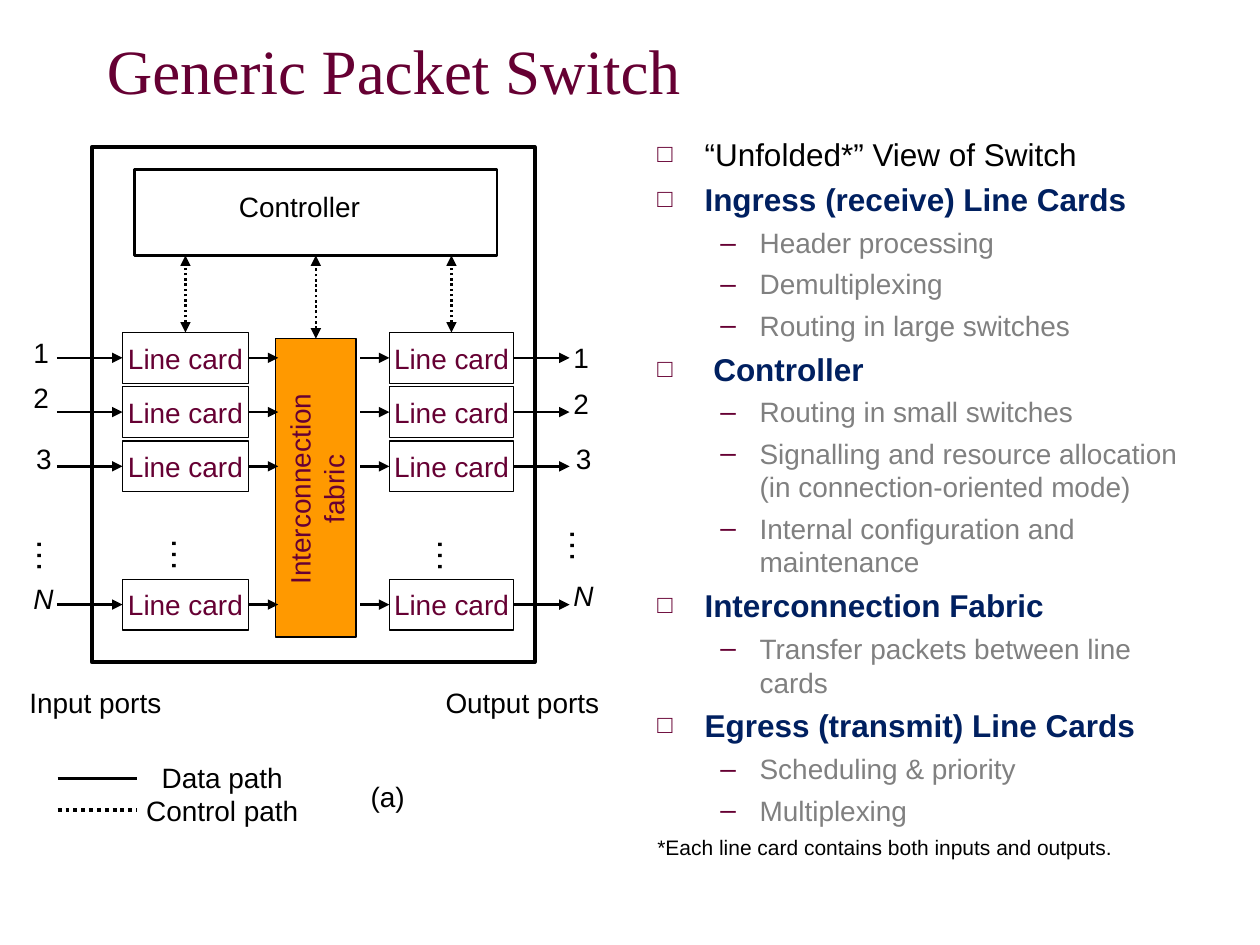
"""Build the Generic Packet Switch slide."""
from lxml.etree import SubElement
from pptx import Presentation
from pptx.dml.color import RGBColor
from pptx.enum.dml import MSO_LINE
from pptx.enum.shapes import MSO_CONNECTOR, MSO_SHAPE
from pptx.enum.text import MSO_ANCHOR, PP_ALIGN
from pptx.oxml.ns import qn
from pptx.util import Pt

THEME = {
    "wine": "660033", "navy": "002060", "gray": "808080", "black": "000000",
    "white": "FFFFFF", "orange": "FF9900",
    "title": 36, "head": 18, "text": 16, "note": 12, "dots": 20,
}
TITLE = "Generic Packet Switch"
POINTS = [
    ("first", "“Unfolded*” View of Switch"),
    ("head", "Ingress (receive) Line Cards"),
    ("sub", "Header processing"),
    ("sub", "Demultiplexing"),
    ("sub", "Routing in large switches"),
    ("head", " Controller"),
    ("sub", "Routing in small switches"),
    ("sub", "Signalling and resource allocation (in connection-oriented mode)"),
    ("sub", "Internal configuration and maintenance"),
    ("head", "Interconnection Fabric"),
    ("sub", "Transfer packets between line cards"),
    ("head", "Egress (transmit) Line Cards"),
    ("sub", "Scheduling & priority"),
    ("sub", "Multiplexing"),
    ("note", "*Each line card contains both inputs and outputs."),
]
LOOKS = {
    "first": {"size": "head", "color": "black", "mark": "□"},
    "head": {"size": "head", "color": "navy", "mark": "□", "bold": True},
    "sub": {"size": "text", "color": "gray", "mark": "–"},
    "note": {"size": "note", "color": "black", "mark": None},
}
PORTS = [
    ("1", 190, (12, 188), (320.5, 191)),
    ("2", 221, (12, 214), (320.5, 217.5)),
    ("3", 252, (13.5, 248.5), (322, 248.5)),
    ("N", 331, (12, 329), (320.5, 327)),
]
NOTES = [
    ("Controller", (129.5, 104.5, 100, 26), {}),
    ("Input ports", (9.5, 388, 90, 26.5), {"align": "CENTER", "anchor": "MIDDLE"}),
    ("Output ports", (247, 388, 103, 26.5), {"align": "CENTER", "anchor": "MIDDLE"}),
    ("Data path Control path", (70.5, 430.5, 113, 46),
     {"align": "CENTER", "anchor": "MIDDLE", "wrap": True}),
    ("(a)", (204.5, 442, 34, 26.5), {"align": "CENTER", "anchor": "MIDDLE"}),
    ("Interconnection\nfabric", (119, 256.5, 124, 46), {"align": "CENTER", "color": "wine", "turn": 270}),
]
DOTS = [(301, 294.5), (225.5, 300), (73.5, 299.5), (-3.5, 300)]
LEGEND = [(445, 1.5, False), (463, 2.25, True)]
INLET, OUTLET, CARD = 32.5, 325.5, 29


def tint(name):
    return RGBColor.from_string(THEME[name])


def style(font, size="text", color="black", **form):
    form = {"name": "Arial", "size": Pt(THEME[size]), **form}
    for key, value in form.items():
        setattr(font, key, value)
    font.color.rgb = tint(color)


def write(shape, text, align="LEFT", anchor="TOP", wrap=False, **form):
    frame = shape.text_frame
    frame.text = text
    frame.word_wrap = wrap
    frame.vertical_anchor = MSO_ANCHOR[anchor]
    for par in frame.paragraphs:
        par.alignment = PP_ALIGN[align]
        style(par.font, **form)
    return frame


def label(slide, text, area, turn=0, **form):
    box = slide.shapes.add_textbox(*map(Pt, area))
    box.rotation = turn
    return write(box, text, **form)


def block(slide, area, width, fill=None):
    box = slide.shapes.add_shape(MSO_SHAPE.RECTANGLE, *map(Pt, area))
    box.shadow.inherit = False
    if fill:
        box.fill.solid()
        box.fill.fore_color.rgb = tint(fill)
    else:
        box.fill.background()
    box.line.color.rgb = tint("black")
    box.line.width = Pt(width)
    return box


def wire(slide, start, stop, ends=("tailEnd",), width=1.5, dotted=False, source=None, target=None):
    link = slide.shapes.add_connector(MSO_CONNECTOR.STRAIGHT, *map(Pt, start + stop))
    if source:
        link.begin_connect(*source)
    if target:
        link.end_connect(*target)
    link.line.color.rgb = tint("black")
    link.line.width = Pt(width)
    if dotted:
        link.line.dash_style = MSO_LINE.ROUND_DOT
    for end in ends:
        SubElement(link.line._get_or_add_ln(), qn("a:" + end), type="triangle")
    SubElement(link._element.spPr, qn("a:effectLst"))


def bullet(par, mark):
    sub = mark == "–"
    par.level = int(sub)
    props = par._p.get_or_add_pPr()
    props.set("marL", str(Pt(58.5 if sub else 27)))
    props.set("indent", str(Pt(-22.5 if sub else -27)))
    if not mark:
        SubElement(props, qn("a:buNone"))
        return
    SubElement(SubElement(props, qn("a:buClr")), qn("a:srgbClr"), val=THEME["wine"])
    SubElement(props, qn("a:buSzPct"), val="100000" if sub else "80000")
    SubElement(props, qn("a:buFont"), typeface="Arial")
    SubElement(props, qn("a:buChar"), char=mark)


def outline(slide):
    box = slide.shapes.add_textbox(*map(Pt, (368.5, 72, 317.5, 408)))
    frame = box.text_frame
    frame.word_wrap = True
    frame.margin_top = Pt(5)
    for rank, (kind, text) in enumerate(POINTS):
        par = frame.add_paragraph() if rank else frame.paragraphs[0]
        look = dict(LOOKS[kind])
        par.text = text
        bullet(par, look.pop("mark"))
        if rank:
            par.space_before = Pt(4.4)
        style(par.font, **look)


def diagram(slide):
    block(slide, (52.5, 84, 253, 294.5), 2.25)
    control = block(slide, (77, 97, 207, 49), 1.5, "white")
    fabric = block(slide, (157.5, 193.5, 46, 170.5), 0.75, "orange")
    tops = []
    for name, top, left, right in PORTS:
        mid = top + CARD / 2
        cards = [block(slide, (x, top, w, CARD), 0.75, "white") for x, w in ((70, 72), (222.5, 71))]
        for card in cards:
            write(card, "Line card", "CENTER", "MIDDLE", color="wine")
        tops.append(cards)
        enter, leave = cards
        wire(slide, (INLET, mid), (70, mid), target=(enter, 1))
        wire(slide, (142, mid), (159, mid), source=(enter, 3))
        wire(slide, (206, mid), (222.5, mid), target=(leave, 1))
        wire(slide, (293.5, mid), (OUTLET, mid), source=(leave, 3))
        for spot in (left, right):
            label(slide, name, spot + (24, 26), italic=name == "N")
    both = ("headEnd", "tailEnd")
    for card, x in zip(tops[0], (106, 258)):
        wire(slide, (x, 190), (x, 146), both, dotted=True, source=(card, 0))
    wire(slide, (180.5, 193.5), (180.5, 146), both, dotted=True, source=(fabric, 0), target=(control, 2))
    for y, width, dotted in LEGEND:
        wire(slide, (33, y), (78.5, y), (), width, dotted)
    for text, area, form in NOTES:
        label(slide, text, area, **form)
    for spot in DOTS:
        label(slide, "…", spot + (38, 31), turn=270, size="dots", wrap=True)


def main():
    deck = Presentation()
    deck.slide_width, deck.slide_height = Pt(720), Pt(540)
    slide = deck.slides.add_slide(deck.slide_layouts[6])
    title = label(slide, TITLE, (54, 0, 612, 72), anchor="MIDDLE", wrap=True,
                  size="title", color="wine", name="Times New Roman")
    title.margin_top = Pt(11)
    outline(slide)
    diagram(slide)
    deck.save("out.pptx")


if __name__ == "__main__":
    main()
